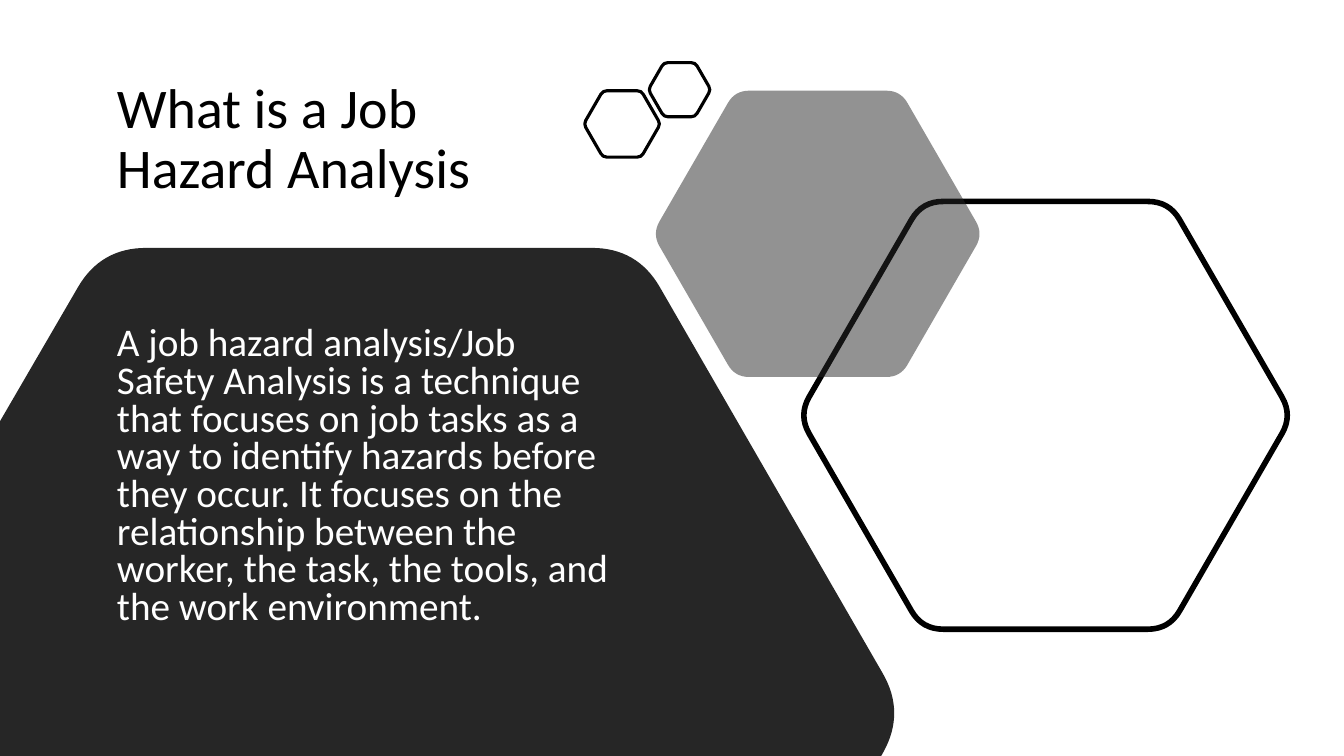
from dataclasses import dataclass
from math import cos, dist, radians, sin

from lxml import etree
from pptx import Presentation
from pptx.dml.color import RGBColor
from pptx.enum.text import MSO_ANCHOR, MSO_AUTO_SIZE, PP_ALIGN
from pptx.oxml.ns import qn
from pptx.util import Inches, Pt

LEFT = PP_ALIGN.LEFT
TOP = MSO_ANCHOR.TOP
MIDDLE = MSO_ANCHOR.MIDDLE
NO_AUTOFIT = MSO_AUTO_SIZE.NONE


@dataclass(frozen=True)
class Theme:
    font: str = "Calibri"
    black: RGBColor = RGBColor(0x00, 0x00, 0x00)
    charcoal: RGBColor = RGBColor(0x26, 0x26, 0x26)
    white: RGBColor = RGBColor(0xFF, 0xFF, 0xFF)
    title_size: int = 40
    body_size: int = 28


theme = Theme()


def add_rounded_polygon(shapes, corners, fill=None, line_width=None):
    """Draw a closed outline; each corner is (x, y, length cut off for rounding)."""
    points, middles = [], []
    for index, (x, y, cut) in enumerate(corners):
        if not cut:
            points.append((x, y))
            continue
        ends = []
        for neighbour in (corners[index - 1], corners[(index + 1) % len(corners)]):
            share = cut / dist((x, y), neighbour[:2])
            ends.append((x + share * (neighbour[0] - x), y + share * (neighbour[1] - y)))
        (x0, y0), (x1, y1) = ends
        middles.append(len(points) + 1)
        points += [ends[0], ((x0 + 2 * x + x1) / 4, (y0 + 2 * y + y1) / 4), ends[1]]
    points = [(Inches(x), Inches(y)) for x, y in points]
    builder = shapes.build_freeform(*points[0])
    builder.add_line_segments(points[1:], close=True)
    shape = builder.convert_to_shape()

    # Turn start, middle and end of each rounded corner into one curve
    outline = next(shape.element.iter(qn("a:path")))
    nodes = list(outline)
    for index in middles:
        start, middle, end = (
            [int(node[0].get(axis)) for axis in "xy"] for node in nodes[index - 1:index + 2]
        )
        corner = [2 * m - (s + e) / 2 for s, m, e in zip(start, middle, end)]
        curve = etree.Element(qn("a:cubicBezTo"))
        for anchor in (start, end):
            x, y = (round((a + 2 * c) / 3) for a, c in zip(anchor, corner))
            etree.SubElement(curve, qn("a:pt"), x=str(x), y=str(y))
        curve.append(nodes[index + 1][0])
        outline.remove(nodes[index + 1])
        outline.replace(nodes[index], curve)

    shape.shadow.inherit = False
    if fill is None:
        shape.fill.background()
    else:
        shape.fill.solid()
        shape.fill.fore_color.rgb = fill
    if line_width is None:
        shape.line.fill.background()
    else:
        shape.line.color.rgb = theme.black
        shape.line.width = Pt(line_width)
    return shape


def hexagon(center_x, center_y, radius, cut):
    """Corners of a regular hexagon with flat top and bottom."""
    return [
        (center_x + radius * cos(radians(angle)), center_y + radius * sin(radians(angle)), cut)
        for angle in range(0, 360, 60)
    ]


presentation = Presentation()
presentation.slide_width = Inches(13.33)
presentation.slide_height = Inches(7.5)
slide = presentation.slides.add_slide(presentation.slide_layouts[1])
title, body = slide.placeholders

# Dark panel: a large hexagon cut off by the left and bottom slide edges
panel_corners = [
    (0, 7.5, 0), (0, 4.18, 0), (1, 2.46, 0.45),
    (6.32, 2.46, 0.45), (8.98, 7.07, 0.45), (8.74, 7.5, 0),
]
add_rounded_polygon(slide.shapes, panel_corners, fill=theme.charcoal)

# Large outlined hexagon and the translucent one over it
add_rounded_polygon(slide.shapes, hexagon(10.37, 4.12, 2.45, 0.21), line_width=4)
translucent = add_rounded_polygon(
    slide.shapes, hexagon(8.11, 2.32, 1.64, 0.14), fill=theme.charcoal
)
color = translucent.element.spPr.find(qn("a:solidFill"))[0]
etree.SubElement(color, qn("a:alpha")).set("val", "50000")

# Pair of small outlined hexagons
pair = slide.shapes.add_group_shape()
for center_x, center_y, radius in ((6.17, 1.23, 0.38), (6.74, 0.89, 0.31)):
    add_rounded_polygon(pair.shapes, hexagon(center_x, center_y, radius, 0.04), line_width=2.25)

# Title and body text, with the body in front of the panel
slide.shapes.element.append(body.element)
title_text = "What is a Job Hazard Analysis"
body_text = (
    "A job hazard analysis/Job Safety Analysis is a technique that focuses on job tasks "
    "as a way to identify hazards before they occur. It focuses on the relationship "
    "between the worker, the task, the tools, and the work environment."
)
for placeholder, text, box, anchor, size, color, spacing, before in (
    (title, title_text, (1.06, 0.49, 4.68, 1.8), MIDDLE, theme.title_size, theme.black, 0.9, 0),
    (body, body_text, (1.06, 3.19, 5.19, 3.38), TOP, theme.body_size, theme.white, 0.8, 10),
):
    placeholder.left, placeholder.top, placeholder.width, placeholder.height = map(Inches, box)
    text_frame = placeholder.text_frame
    text_frame.text = text
    text_frame.word_wrap = True
    text_frame.auto_size = NO_AUTOFIT
    text_frame.vertical_anchor = anchor
    paragraph = text_frame.paragraphs[0]
    paragraph.alignment = LEFT
    paragraph.line_spacing = spacing
    paragraph.space_before = Pt(before)
    font = paragraph.runs[0].font
    font.name = theme.font
    font.size = Pt(size)
    font.color.rgb = color

# Body paragraph without bullet or indent
properties = body.text_frame.paragraphs[0]._p.get_or_add_pPr()
properties.set("marL", "0")
properties.set("indent", "0")
etree.SubElement(properties, qn("a:buNone"))

presentation.save("out.pptx")
